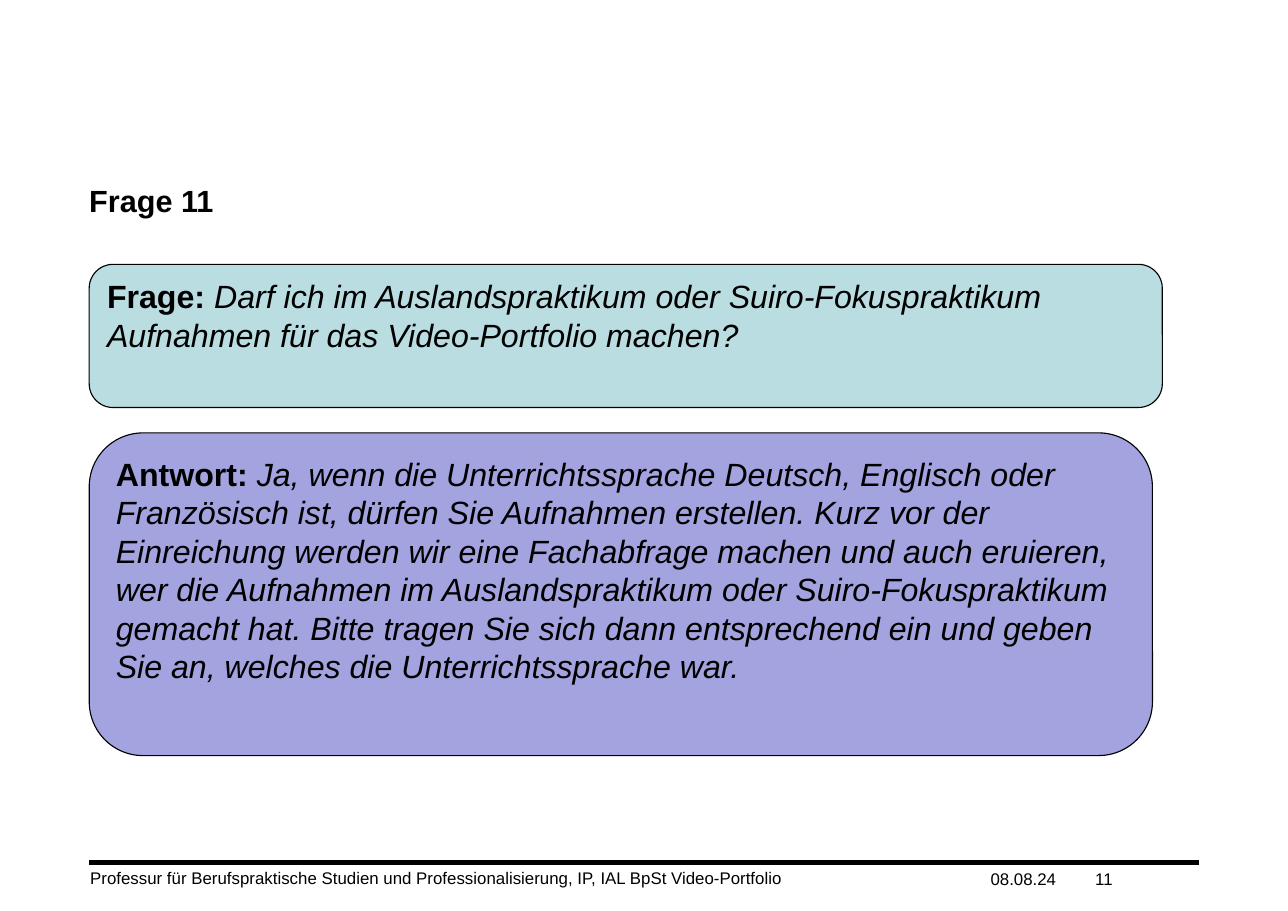
"""Build the slide "Frage 11" with a question card and an answer card."""
from dataclasses import dataclass

from lxml import etree
from pptx import Presentation
from pptx.dml.color import RGBColor
from pptx.enum.shapes import MSO_CONNECTOR, MSO_SHAPE
from pptx.enum.text import MSO_ANCHOR, PP_ALIGN
from pptx.oxml.ns import qn
from pptx.slide import Slide
from pptx.util import Inches, Pt

ROUNDED = MSO_SHAPE.ROUNDED_RECTANGLE
STRAIGHT = MSO_CONNECTOR.STRAIGHT
TOP, BOTTOM = MSO_ANCHOR.TOP, MSO_ANCHOR.BOTTOM
LEFT = PP_ALIGN.LEFT

BLACK = RGBColor(0x00, 0x00, 0x00)
TEAL = RGBColor(0xBA, 0xDD, 0xE1)
LILAC = RGBColor(0xA3, 0xA3, 0xE0)
FONT = "Arial"
MARGIN = 0.81
RULE_Y = 7.83
RULE_END = 10.88


@dataclass(frozen=True)
class Label:
    text: str
    left: float
    top: float
    width: float
    height: float
    size: float = 11
    bold: bool = False
    anchor: MSO_ANCHOR = BOTTOM
    inset: tuple[float, float] = (0, 0)


@dataclass(frozen=True)
class Card:
    heading: str
    body: str
    top: float
    width: float
    height: float
    color: RGBColor


LABELS = (
    Label("Professur für Berufspraktische Studien und Professionalisierung, IP, IAL BpSt Video-Portfolio",
          0.72, RULE_Y, 9.35, 0.29, anchor=TOP, inset=(0.1, 0.05)),
    Label("08.08.24", 8.99, 7.87, 0.95, 0.2),
    Label("11", 9.94, 7.87, 0.94, 0.2),
    Label("Frage 11", MARGIN, 1.65, 10.08, 0.4, size=20, bold=True, anchor=TOP),
)

CARDS = (
    Card("Frage: ",
         "Darf ich im Auslandspraktikum oder Suiro-Fokuspraktikum "
         "Aufnahmen für das Video-Portfolio machen?",
         2.4, 9.74, 1.3, TEAL),
    Card("Antwort: ",
         "Ja, wenn die Unterrichtssprache Deutsch, Englisch oder Französisch ist, "
         "dürfen Sie Aufnahmen erstellen. Kurz vor der Einreichung werden wir eine "
         "Fachabfrage machen und auch eruieren, wer die Aufnahmen im Auslandspraktikum "
         "oder Suiro-Fokuspraktikum gemacht hat. Bitte tragen Sie sich dann entsprechend "
         "ein und geben Sie an, welches die Unterrichtssprache war.",
         3.93, 9.65, 2.93, LILAC),
)


def draw_footer_rule(slide: Slide) -> None:
    rule = slide.shapes.add_connector(
        STRAIGHT, Inches(MARGIN), Inches(RULE_Y), Inches(RULE_END), Inches(RULE_Y))
    rule.line.color.rgb = BLACK
    rule.line.width = Pt(3)
    etree.SubElement(rule._element.spPr, qn("a:effectLst"))


def draw_label(slide: Slide, label: Label) -> None:
    box = slide.shapes.add_textbox(
        Inches(label.left), Inches(label.top), Inches(label.width), Inches(label.height))
    frame = box.text_frame
    frame.word_wrap = True
    frame.vertical_anchor = label.anchor
    side, edge = label.inset
    frame.margin_left = frame.margin_right = Inches(side)
    frame.margin_top = frame.margin_bottom = Inches(edge)
    line = frame.paragraphs[0]
    line.text = label.text
    line.font.name = FONT
    line.font.size = Pt(label.size)
    line.font.bold = label.bold
    line.font.color.rgb = BLACK


def draw_card(slide: Slide, card: Card) -> None:
    panel = slide.shapes.add_shape(
        ROUNDED, Inches(MARGIN), Inches(card.top), Inches(card.width), Inches(card.height))
    panel.shadow.inherit = False
    panel.fill.solid()
    panel.fill.fore_color.rgb = card.color
    panel.line.color.rgb = BLACK
    panel.line.width = Pt(0.75)
    frame = panel.text_frame
    frame.word_wrap = True
    frame.vertical_anchor = TOP
    statement = frame.paragraphs[0]
    statement.alignment = LEFT
    statement.font.name = FONT
    statement.font.size = Pt(21)
    statement.font.color.rgb = BLACK
    heading = statement.add_run()
    heading.text = card.heading
    heading.font.bold = True
    body = statement.add_run()
    body.text = card.body
    body.font.italic = True


def main() -> None:
    deck = Presentation()
    deck.slide_width = Inches(11.69)
    deck.slide_height = Inches(8.27)
    slide = deck.slides.add_slide(deck.slide_layouts[6])
    draw_footer_rule(slide)
    for label in LABELS:
        draw_label(slide, label)
    for card in CARDS:
        draw_card(slide, card)
    deck.save("out.pptx")


if __name__ == "__main__":
    main()
